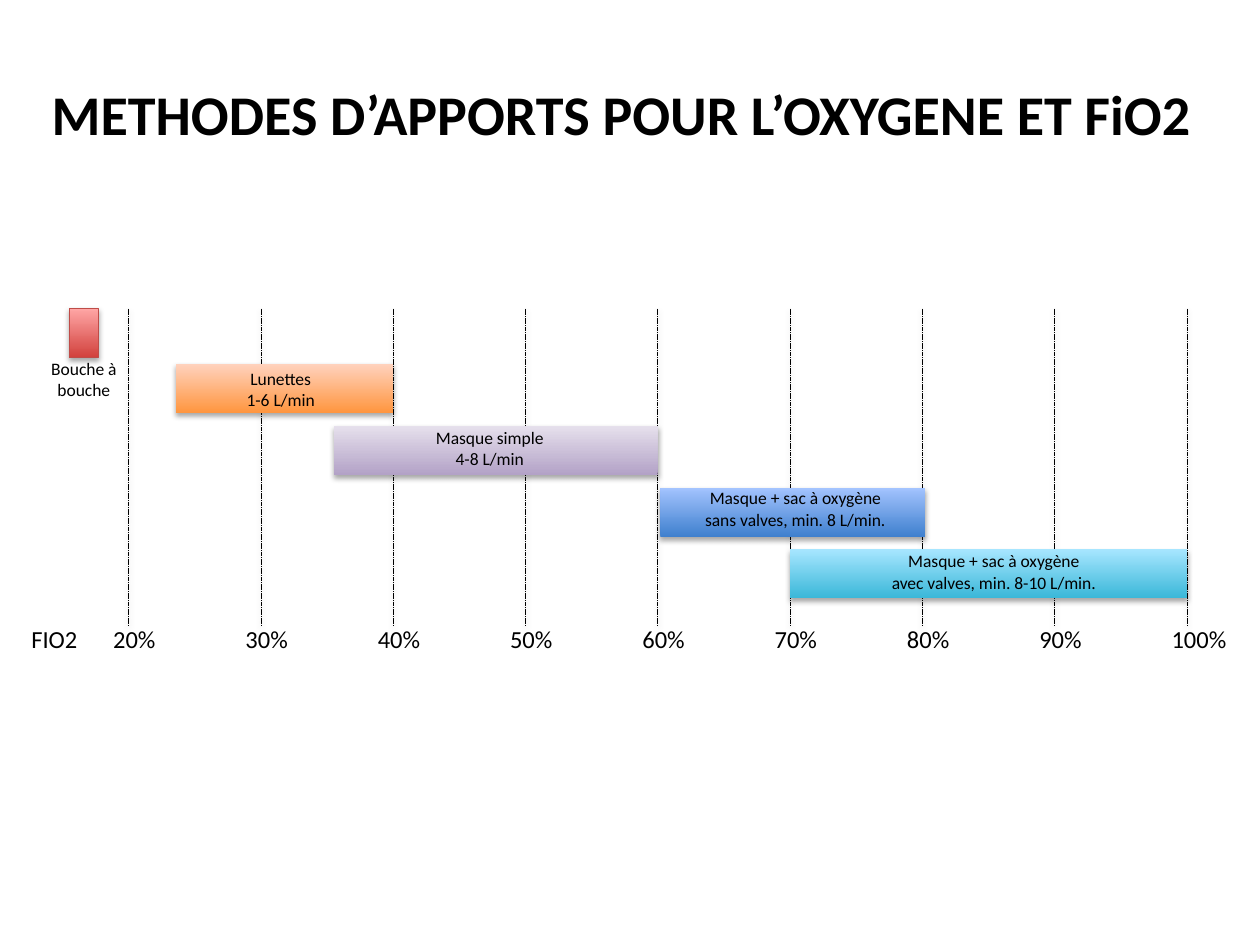
from dataclasses import dataclass
from typing import Any, NamedTuple

from pptx import Presentation
from pptx.dml.color import RGBColor
from pptx.enum.dml import MSO_LINE
from pptx.enum.shapes import MSO_CONNECTOR, MSO_SHAPE
from pptx.enum.text import MSO_ANCHOR, MSO_AUTO_SIZE, PP_ALIGN
from pptx.oxml import parse_xml
from pptx.oxml.ns import nsdecls
from pptx.util import Inches, Pt

RECT = MSO_SHAPE.RECTANGLE
STRAIGHT = MSO_CONNECTOR.STRAIGHT
DASH = MSO_LINE.SQUARE_DOT
LEFT, CENTER = PP_ALIGN.LEFT, PP_ALIGN.CENTER
TOP = MSO_ANCHOR.TOP
GROW = MSO_AUTO_SIZE.SHAPE_TO_FIT_TEXT


@dataclass(frozen=True)
class Theme:
    font: str = "Calibri"
    ink: str = "000000"
    edge: str = "BF4C48"
    head: int = 32
    axis: int = 14
    note: int = 10


@dataclass(frozen=True)
class Grid:
    left: float = 1.02
    step: float = 1.05
    first: int = 20
    top: float = 2.45
    base: float = 4.97
    bar: float = 2.89
    pitch: float = 0.49
    tall: float = 0.39

    def col(self, rate: float) -> float:
        return self.left + (rate - self.first) / 10 * self.step

    def row(self, num: int) -> float:
        return self.bar + num * self.pitch


class Box(NamedTuple):
    left: float
    top: float
    width: float
    height: float


class Method(NamedTuple):
    low: float
    high: float
    dark: str
    light: str
    text: str
    mid: float
    wide: float
    lift: float


THEME = Theme()
GRID = Grid()
METHODS = [
    Method(23.6, 40, "FF953E", "FFD2BD", "Lunettes\n1-6 L/min", 31.5, 0.75, 0.02),
    Method(35.5, 60, "B3A2C7", "E6E0EC", "Masque simple \n4-8 L/min", 47.3, 1.07, 0.04),
    Method(60.2, 80.2, "3F80CE", "A4C4FF",
           "Masque + sac à oxygène\nsans valves, min. 8 L/min.", 70.4, 1.66, 0.05),
    Method(70, 100, "39B7D8", "A7E6FF",
           "Masque + sac à oxygène\navec valves, min. 8-10 L/min.", 85.4, 1.85, 0.04),
]


def color(code: str) -> RGBColor:
    return RGBColor.from_string(code)


def shade(shape: Any, dist: float, alpha: int) -> None:
    shape._element.spPr.append(parse_xml(
        f'<a:effectLst {nsdecls("a")}><a:outerShdw blurRad="{Pt(3.1)}" '
        f'dist="{Pt(dist)}" dir="5400000" rotWithShape="0"><a:srgbClr val="{THEME.ink}">'
        f'<a:alpha val="{alpha * 1000}"/></a:srgbClr></a:outerShdw></a:effectLst>'))


def write(shape: Any, text: str, size: int, align: Any = LEFT,
          bold: bool = False, wrap: bool = False) -> None:
    frame = shape.text_frame
    frame.text = text
    frame.word_wrap = wrap
    frame.auto_size = GROW
    frame.vertical_anchor = TOP
    for para in frame.paragraphs:
        para.alignment = align
        font = para.font
        font.name, font.size, font.bold = THEME.font, Pt(size), bold
        font.color.rgb = color(THEME.ink)


def label(slide: Any, box: Box, text: str, size: int,
          align: Any = LEFT, wrap: bool = False) -> None:
    shape = slide.shapes.add_textbox(*map(Inches, box))
    write(shape, text, size, align, wrap=wrap)


def title(slide: Any, box: Box, text: str) -> None:
    shape = slide.shapes.title
    shape.left, shape.top, shape.width, shape.height = map(Inches, box)
    write(shape, text, THEME.head, bold=True)


def rule(slide: Any, rate: int) -> None:
    at = Inches(GRID.col(rate))
    line = slide.shapes.add_connector(
        STRAIGHT, at, Inches(GRID.top), at, Inches(GRID.base))
    line.line.color.rgb = color(THEME.ink)
    line.line.width = Pt(0.25)
    line.line.dash_style = DASH
    shade(line, 1.6, 38)


def bar(slide: Any, box: Box, dark: str, light: str, edge: str = "") -> None:
    shape = slide.shapes.add_shape(RECT, *map(Inches, box))
    shape.fill.gradient()
    shape.fill.gradient_angle = 90
    for place, (stop, code) in enumerate(zip(shape.fill.gradient_stops, (dark, light))):
        stop.position = place
        stop.color.rgb = color(code)
    if edge:
        shape.line.color.rgb = color(edge)
        shape.line.width = Pt(0.75)
    else:
        shape.line.fill.background()
    shade(shape, 1.8, 35)


def method(slide: Any, num: int, item: Method) -> None:
    left, top = GRID.col(item.low), GRID.row(num)
    bar(slide, Box(left, top, GRID.col(item.high) - left, GRID.tall),
        item.dark, item.light)
    label(slide, Box(GRID.col(item.mid) - item.wide / 2, top - item.lift, item.wide, 0.44),
          item.text, THEME.note, CENTER)


def main() -> None:
    deck = Presentation()
    deck.slide_width, deck.slide_height = Inches(10), Inches(7.5)
    slide = deck.slides.add_slide(deck.slide_layouts[5])
    title(slide, Box(0.31, 0.58, 9.47, 0.64), "METHODES D’APPORTS POUR L’OXYGENE ET FiO2")
    rates = range(GRID.first, 101, 10)
    for rate in rates:
        rule(slide, rate)
    foot = 4.9
    label(slide, Box(0.15, foot, 0.58, 0.34), "FIO2", THEME.axis)
    for rate in rates:
        wide = 0.64 if rate == 100 else 0.54
        label(slide, Box(GRID.col(rate) - 0.22, foot, wide, 0.34), f"{rate}%", THEME.axis)
    for num, item in enumerate(METHODS):
        method(slide, num, item)
    bar(slide, Box(0.55, GRID.top, 0.23, GRID.tall), "D1403C", "FFA6A5", THEME.edge)
    label(slide, Box(0.29, 2.79, 0.75, 0.44), "Bouche à bouche", THEME.note, CENTER, True)
    deck.save("out.pptx")


if __name__ == "__main__":
    main()
